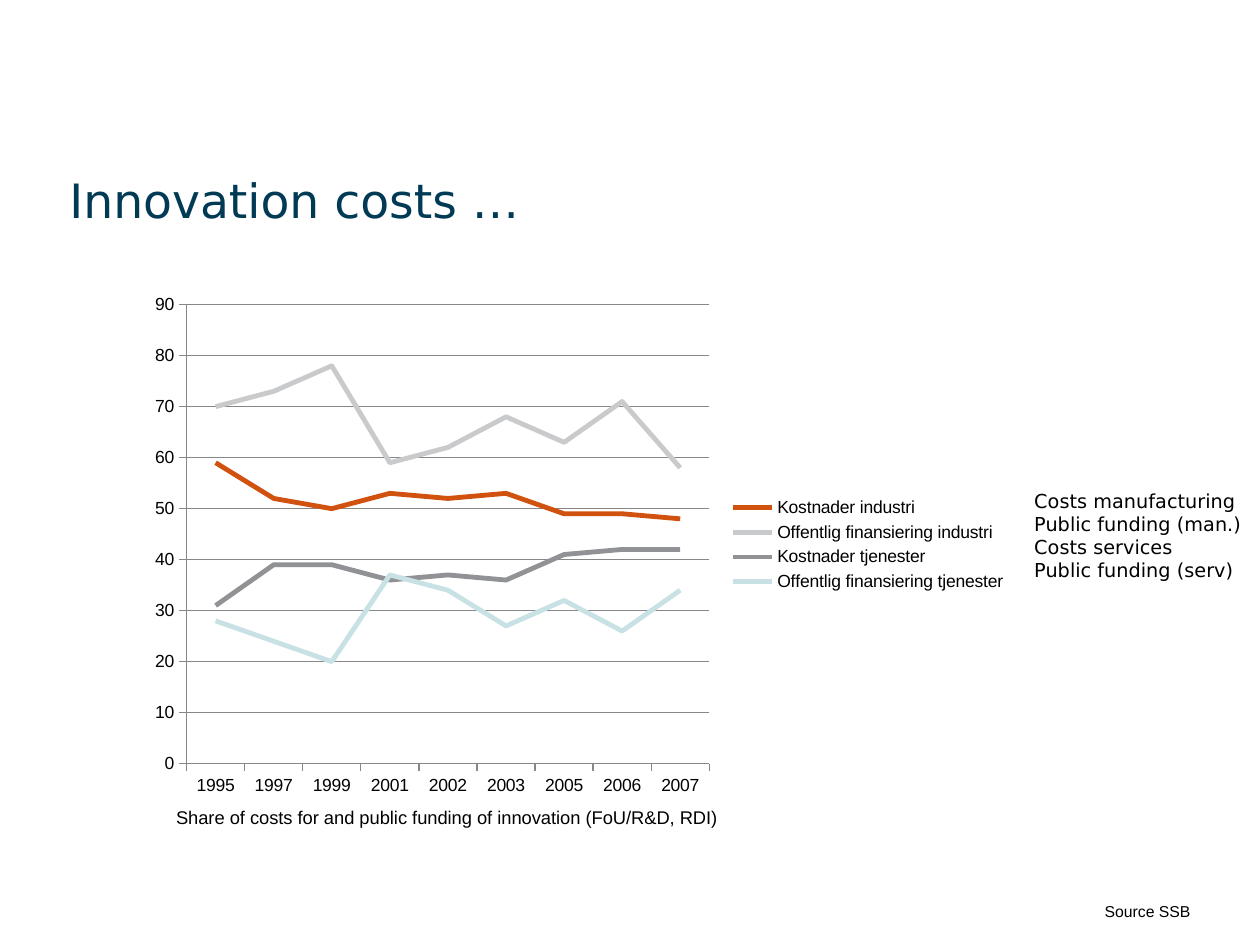
from dataclasses import dataclass

from lxml import etree
from pptx import Presentation
from pptx.chart.data import CategoryChartData
from pptx.dml.color import RGBColor
from pptx.enum import chart as charts
from pptx.enum import text
from pptx.oxml import ns
from pptx.util import Cm, Pt


@dataclass(frozen=True)
class Theme:
    heading_font: str = "DejaVu Sans"
    body_font: str = "Arial"
    heading: str = "003A54"
    ink: str = "000000"
    grid: str = "878787"
    title_size: float = 27
    caption_size: float = 10.5
    translation_size: float = 11
    chart_size: float = 10
    source_size: float = 9
    series_width: float = 2.75
    axis_width: float = 0.75


@dataclass(frozen=True)
class Box:
    left: float
    top: float
    width: float
    height: float

    def lengths(self) -> tuple:
        return Cm(self.left), Cm(self.top), Cm(self.width), Cm(self.height)


@dataclass(frozen=True)
class Label:
    wording: str
    box: Box
    font: str
    size: float


@dataclass(frozen=True)
class Trend:
    name: str
    shares: tuple
    color: str


THEME = Theme()
YEARS = ("1995", "1997", "1999", "2001", "2002", "2003", "2005", "2006", "2007")
TRENDS = (
    Trend("Kostnader industri", (59, 52, 50, 53, 52, 53, 49, 49, 48), "D1520F"),
    Trend("Offentlig finansiering industri", (70, 73, 78, 59, 62, 68, 63, 71, 58), "C9CACC"),
    Trend("Kostnader tjenester", (31, 39, 39, 36, 37, 36, 41, 42, 42), "919295"),
    Trend("Offentlig finansiering tjenester", (28, 24, 20, 37, 34, 27, 32, 26, 34), "C8E1E4"),
)
LABELS = (
    Label("Source SSB", Box(22.02, 18.06, 2.39, 0.64), THEME.body_font, THEME.source_size),
    Label("Share of costs for and public funding of innovation (FoU/R&D, RDI)",
          Box(3.3, 16.13, 13.18, 0.71), THEME.body_font, THEME.caption_size),
    Label("Costs manufacturing\nPublic funding (man.)\nCosts services\nPublic funding (serv)",
          Box(20.6, 9.73, 4.8, 2.13), THEME.heading_font, THEME.translation_size),
)
TITLE_BOX = Box(1.4, 2.59, 23.32, 2.01)
CHART_BOX = Box(2.69, 5.72, 17.86, 10.52)
PLOT_SHARE = Box(0.06, 0.04, 0.59, 0.88)


def style_font(font, name: str, size: float, color: str) -> None:
    font.name = name
    font.size = Pt(size)
    font.color.rgb = RGBColor.from_string(color)


def style_line(line, color: str, width: float) -> None:
    line.color.rgb = RGBColor.from_string(color)
    line.width = Pt(width)


def write_title(heading, wording: str) -> None:
    heading.left, heading.top, heading.width, heading.height = TITLE_BOX.lengths()
    frame = heading.text_frame
    frame.text = wording
    frame.auto_size = text.MSO_AUTO_SIZE.NONE
    frame.vertical_anchor = text.MSO_ANCHOR.BOTTOM
    frame.margin_left = frame.margin_right = frame.margin_top = frame.margin_bottom = 0
    frame.paragraphs[0].alignment = text.PP_ALIGN.LEFT
    style_font(frame.paragraphs[0].runs[0].font, THEME.heading_font, THEME.title_size, THEME.heading)


def draw_label(slide, label: Label) -> None:
    frame = slide.shapes.add_textbox(*label.box.lengths()).text_frame
    frame.text = label.wording
    frame.word_wrap = False
    frame.auto_size = text.MSO_AUTO_SIZE.SHAPE_TO_FIT_TEXT
    for paragraph in frame.paragraphs:
        for run in paragraph.runs:
            style_font(run.font, label.font, label.size, THEME.ink)


def place_plot(chart, share: Box) -> None:
    plot_area = chart.plots[0]._element.getparent()
    layout = plot_area.find(ns.qn("c:layout"))
    if layout is None:
        layout = etree.Element(ns.qn("c:layout"))
        plot_area.insert(0, layout)
    manual = etree.SubElement(layout, ns.qn("c:manualLayout"))
    for tag, setting in (
        ("layoutTarget", "inner"), ("xMode", "edge"), ("yMode", "edge"),
        ("x", share.left), ("y", share.top), ("w", share.width), ("h", share.height),
    ):
        etree.SubElement(manual, ns.qn(f"c:{tag}")).set("val", str(setting))


def draw_trends(slide) -> None:
    shares = CategoryChartData()
    shares.categories = YEARS
    for trend in TRENDS:
        shares.add_series(trend.name, trend.shares)
    chart = slide.shapes.add_chart(charts.XL_CHART_TYPE.LINE, *CHART_BOX.lengths(), shares).chart
    style_font(chart.font, THEME.body_font, THEME.chart_size, THEME.ink)
    chart.has_title = False
    chart.has_legend = True
    chart.legend.position = charts.XL_LEGEND_POSITION.RIGHT
    chart.legend.include_in_layout = False
    chart.plots[0].vary_by_categories = False
    for series, trend in zip(chart.plots[0].series, TRENDS):
        series.smooth = False
        style_line(series.format.line, trend.color, THEME.series_width)
    for axis in (chart.category_axis, chart.value_axis):
        axis.major_tick_mark = charts.XL_TICK_MARK.OUTSIDE
        axis.minor_tick_mark = charts.XL_TICK_MARK.NONE
        style_line(axis.format.line, THEME.grid, THEME.axis_width)
    chart.category_axis.has_major_gridlines = False
    percent = chart.value_axis
    percent.minimum_scale, percent.maximum_scale, percent.major_unit = 0, 90, 10
    percent.has_major_gridlines = True
    style_line(percent.major_gridlines.format.line, THEME.grid, THEME.axis_width)
    place_plot(chart, PLOT_SHARE)


def main() -> None:
    deck = Presentation()
    deck.slide_width, deck.slide_height = Cm(25.4), Cm(19.05)
    slide = deck.slides.add_slide(deck.slide_layouts.get_by_name("Title Only"))
    write_title(slide.shapes.title, "Innovation costs …")
    draw_trends(slide)
    for label in LABELS:
        draw_label(slide, label)
    deck.save("out.pptx")


if __name__ == "__main__":
    main()
